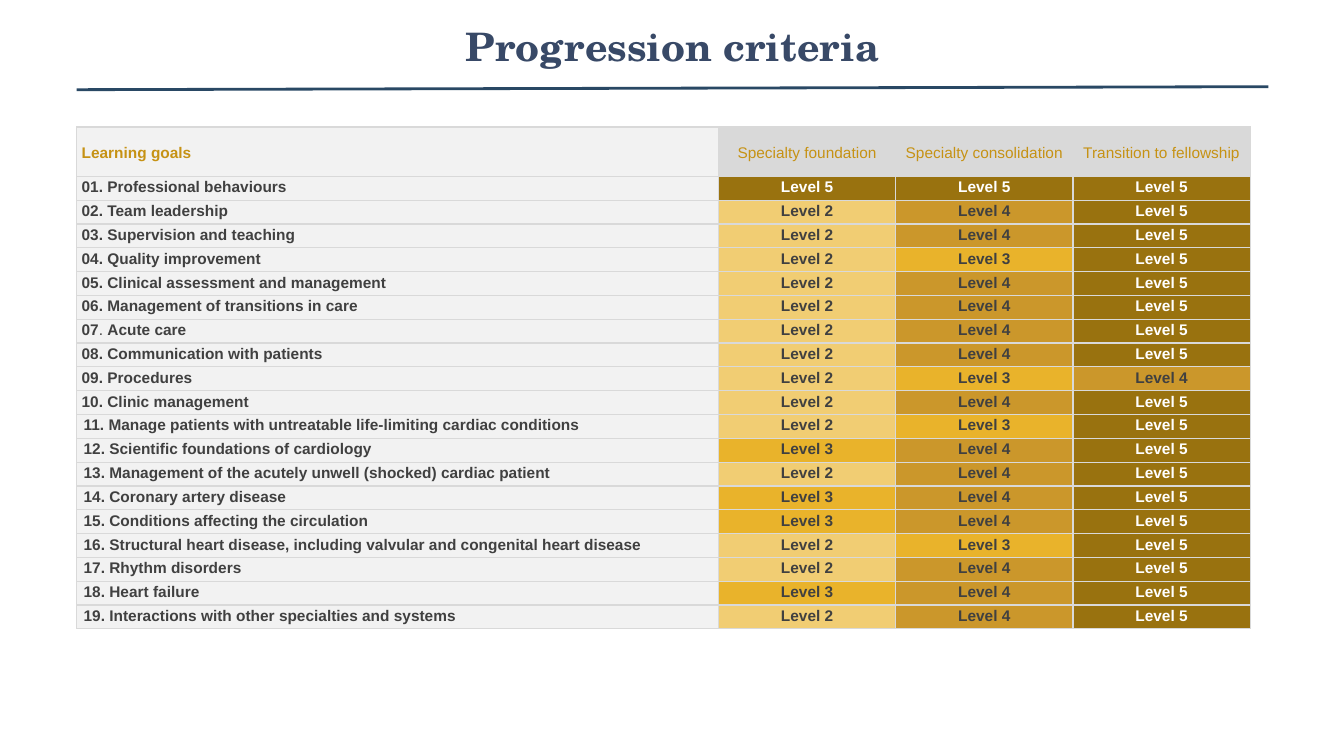
from dataclasses import dataclass

from lxml import etree
from pptx import Presentation
from pptx import util as u
from pptx.dml.color import RGBColor
from pptx.enum import shapes, text
from pptx.oxml import ns

COLORS = {
    "title": "384967",
    "rule": "294864",
    "heading": "C69214",
    "heading_fill": "D9D9D9",
    "border": "D9D9D9",
    "goal_fill": "F2F2F2",
    "dark": "404040",
    "white": "FFFFFF",
}
LEVEL_FILLS = {2: "F1CD73", 3: "E9B32B", 4: "CB972B", 5: "99720F"}
SLIDE_WIDTH, SLIDE_HEIGHT = u.Inches(13.33), u.Inches(7.5)
TABLE_LEFT, TABLE_TOP = u.Inches(0.76), u.Inches(1.26)
TABLE_WIDTH, TABLE_HEIGHT = u.Inches(11.64), u.Inches(4.98)
GOAL_SHARE, HEADER_SHARE = 0.547, 0.0985
STAGES = ["Specialty foundation", "Specialty consolidation", "Transition to fellowship"]


@dataclass(frozen=True)
class Goal:
    name: str
    levels: tuple[int, int, int]
    light_separator: bool = False


@dataclass(frozen=True)
class CellStyle:
    fill: str
    color: str
    bold: bool = True
    centered: bool = True
    middle: bool = False
    inset: float = 0.05


GOALS = [
    Goal("Professional behaviours", (5, 5, 5)),
    Goal("Team leadership", (2, 4, 5)),
    Goal("Supervision and teaching", (2, 4, 5)),
    Goal("Quality improvement", (2, 3, 5)),
    Goal("Clinical assessment and management", (2, 4, 5)),
    Goal("Management of transitions in care", (2, 4, 5)),
    Goal("Acute care", (2, 4, 5), light_separator=True),
    Goal("Communication with patients", (2, 4, 5)),
    Goal("Procedures", (2, 3, 4)),
    Goal("Clinic management", (2, 4, 5)),
    Goal("Manage patients with untreatable life-limiting cardiac conditions", (2, 3, 5)),
    Goal("Scientific foundations of cardiology", (3, 4, 5)),
    Goal("Management of the acutely unwell (shocked) cardiac patient", (2, 4, 5)),
    Goal("Coronary artery disease", (3, 4, 5)),
    Goal("Conditions affecting the circulation", (3, 4, 5)),
    Goal("Structural heart disease, including valvular and congenital heart disease", (2, 3, 5)),
    Goal("Rhythm disorders", (2, 4, 5)),
    Goal("Heart failure", (3, 4, 5)),
    Goal("Interactions with other specialties and systems", (2, 4, 5)),
]


def add_borders(cell) -> None:
    properties = cell._tc.get_or_add_tcPr()
    for index, side in enumerate(("lnL", "lnR", "lnT", "lnB")):
        line = etree.Element(ns.qn(f"a:{side}"), w=str(u.Pt(1)))
        fill = etree.SubElement(line, ns.qn("a:solidFill"))
        etree.SubElement(fill, ns.qn("a:srgbClr"), val=COLORS["border"])
        properties.insert(index, line)


def fill_cell(cell, parts: list[str], style: CellStyle) -> None:
    cell.fill.solid()
    cell.fill.fore_color.rgb = RGBColor.from_string(style.fill)
    cell.margin_left = cell.margin_right = u.Inches(style.inset)
    cell.margin_top = cell.margin_bottom = 0
    cell.vertical_anchor = text.MSO_ANCHOR.MIDDLE if style.middle else text.MSO_ANCHOR.TOP
    paragraph = cell.text_frame.paragraphs[0]
    paragraph.alignment = text.PP_ALIGN.CENTER if style.centered else text.PP_ALIGN.LEFT
    paragraph.line_spacing = 1.15
    paragraph.font.name = "Arial"
    paragraph.font.size = u.Pt(11)
    paragraph.font.bold = style.bold
    paragraph.font.color.rgb = RGBColor.from_string(style.color)
    for part in parts:
        run = paragraph.add_run()
        run.text = part
        if part == ". ":
            run.font.bold = False
    add_borders(cell)


def add_title(slide) -> None:
    title = slide.shapes.title
    title.left, title.top = u.Inches(2.17), u.Inches(0.17)
    title.width, title.height = u.Inches(9), u.Inches(1.25)
    title.text_frame.text = "Progression criteria"
    title.text_frame.vertical_anchor = text.MSO_ANCHOR.TOP
    paragraph = title.text_frame.paragraphs[0]
    paragraph.alignment = text.PP_ALIGN.CENTER
    paragraph.font.name = "TeX Gyre Schola"
    paragraph.font.size = u.Pt(28)
    paragraph.font.bold = True
    paragraph.font.color.rgb = RGBColor.from_string(COLORS["title"])


def add_rule(slide) -> None:
    rule = slide.shapes.add_connector(
        shapes.MSO_CONNECTOR.STRAIGHT,
        TABLE_LEFT, u.Inches(0.89), u.Inches(12.58), u.Inches(0.86),
    )
    rule.line.color.rgb = RGBColor.from_string(COLORS["rule"])
    rule.line.width = u.Pt(2)
    etree.SubElement(rule._element.spPr, ns.qn("a:effectLst"))


def add_criteria_table(slide) -> None:
    table = slide.shapes.add_table(
        len(GOALS) + 1, len(STAGES) + 1, TABLE_LEFT, TABLE_TOP, TABLE_WIDTH, TABLE_HEIGHT
    ).table
    table.first_row = table.horz_banding = False
    for index, column in enumerate(table.columns):
        share = (1 - GOAL_SHARE) / len(STAGES) if index else GOAL_SHARE
        column.width = int(TABLE_WIDTH * share)
    for index, row in enumerate(table.rows):
        share = (1 - HEADER_SHARE) / len(GOALS) if index else HEADER_SHARE
        row.height = int(TABLE_HEIGHT * share)

    goal_heading = CellStyle(COLORS["goal_fill"], COLORS["heading"], centered=False, middle=True)
    stage_heading = CellStyle(COLORS["heading_fill"], COLORS["heading"], bold=False, middle=True)
    fill_cell(table.cell(0, 0), ["Learning goals"], goal_heading)
    for column, stage in enumerate(STAGES, start=1):
        fill_cell(table.cell(0, column), [stage], stage_heading)

    for number, goal in enumerate(GOALS, start=1):
        inset = 0.07 if number > 10 else 0.05
        style = CellStyle(COLORS["goal_fill"], COLORS["dark"], centered=False, inset=inset)
        parts = [f"{number:02d}", ". ", goal.name]
        fill_cell(table.cell(number, 0), parts if goal.light_separator else ["".join(parts)], style)
        for column, level in enumerate(goal.levels, start=1):
            color = COLORS["white"] if level == 5 else COLORS["dark"]
            level_style = CellStyle(LEVEL_FILLS[level], color)
            fill_cell(table.cell(number, column), [f"Level {level}"], level_style)


def main() -> None:
    presentation = Presentation()
    presentation.slide_width, presentation.slide_height = SLIDE_WIDTH, SLIDE_HEIGHT
    slide = presentation.slides.add_slide(presentation.slide_layouts.get_by_name("Title Only"))
    add_title(slide)
    add_rule(slide)
    add_criteria_table(slide)
    presentation.save("out.pptx")


if __name__ == "__main__":
    main()
